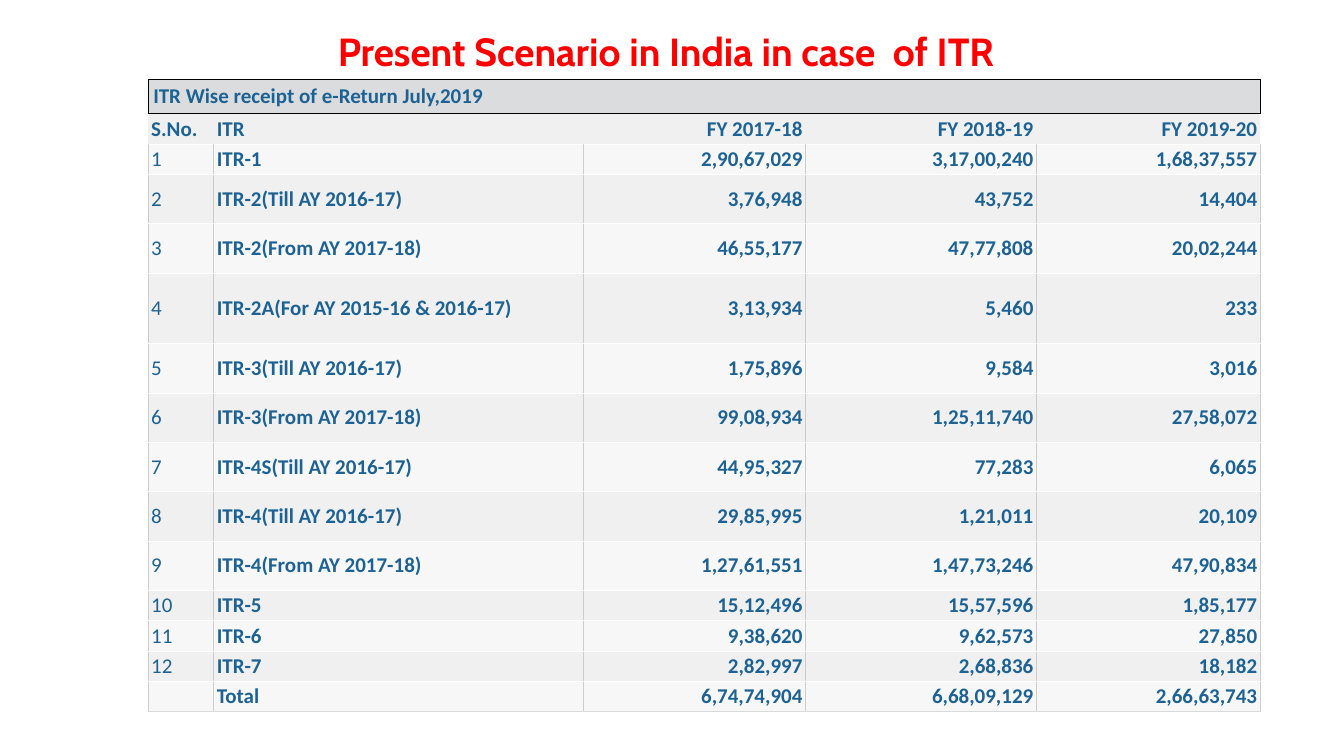
from dataclasses import dataclass

from lxml import etree
from pptx import Presentation
from pptx.dml.color import RGBColor
from pptx.enum import text
from pptx.oxml.ns import qn
from pptx.util import Inches, Pt


@dataclass(frozen=True)
class Theme:
    title_font: str = "Cabin"
    body_font: str = "Calibri"
    title_size: int = 28
    body_size: int = 15
    title_color: str = "FF0000"
    body_color: str = "1D6294"
    banner_fill: str = "DBDCDE"
    band_fills: tuple = ("F7F7F7", "F0F0F0")
    banner_line: str = "000000"
    side_line: str = "CCCCCC"
    row_line: str = "FFFFFF"
    last_line: str = "DADADA"


theme = Theme()
NO_STYLE = "{2D5ABB26-0587-4C30-8999-92F81FD0307C}"


def add_run(paragraph, words, font, size, color, bold):
    run = paragraph.add_run()
    run.text = words
    run.font.name = font
    run.font.size = Pt(size)
    run.font.bold = bold
    run.font.color.rgb = RGBColor.from_string(color)


def style_cell(cell, fill, borders, side_margin):
    """Set fill, margins and borders; borders maps L, R, T, B to (colour, points)."""
    properties = cell._tc.get_or_add_tcPr()
    for side in "LRTB":
        if side in borders:
            color, width = borders[side]
            line = etree.SubElement(properties, qn(f"a:ln{side}"), w=str(Pt(width)))
            solid = etree.SubElement(line, qn("a:solidFill"))
            etree.SubElement(solid, qn("a:srgbClr"), val=color)
    cell.fill.solid()
    cell.fill.fore_color.rgb = RGBColor.from_string(fill)
    cell.margin_left = cell.margin_right = Inches(side_margin)
    cell.margin_top = cell.margin_bottom = Inches(0.02)
    cell.vertical_anchor = text.MSO_ANCHOR.MIDDLE


presentation = Presentation()
presentation.slide_width = Inches(13.33)
presentation.slide_height = Inches(7.5)
slide = presentation.slides.add_slide(presentation.slide_layouts[5])

# Title
title = slide.shapes.title
title.left, title.top = Inches(3.25), Inches(0.22)
title.width, title.height = Inches(7.15), Inches(0.57)
title.text_frame.auto_size = text.MSO_AUTO_SIZE.NONE
title_paragraph = title.text_frame.paragraphs[0]
title_paragraph.alignment = text.PP_ALIGN.LEFT
add_run(title_paragraph, "Present Scenario in India in case  of ITR",
        theme.title_font, theme.title_size, theme.title_color, True)

# Table of returns
rows = [
    ("S.No.", "ITR", "FY 2017-18", "FY 2018-19", "FY 2019-20"),
    ("1", "ITR-1", "2,90,67,029", "3,17,00,240", "1,68,37,557"),
    ("2", "ITR-2(Till AY 2016-17)", "3,76,948", "43,752", "14,404"),
    ("3", "ITR-2(From AY 2017-18)", "46,55,177", "47,77,808", "20,02,244"),
    ("4", "ITR-2A(For AY 2015-16 & 2016-17)", "3,13,934", "5,460", "233"),
    ("5", "ITR-3(Till AY 2016-17)", "1,75,896", "9,584", "3,016"),
    ("6", "ITR-3(From AY 2017-18)", "99,08,934", "1,25,11,740", "27,58,072"),
    ("7", "ITR-4S(Till AY 2016-17)", "44,95,327", "77,283", "6,065"),
    ("8", "ITR-4(Till AY 2016-17)", "29,85,995", "1,21,011", "20,109"),
    ("9", "ITR-4(From AY 2017-18)", "1,27,61,551", "1,47,73,246", "47,90,834"),
    ("10", "ITR-5", "15,12,496", "15,57,596", "1,85,177"),
    ("11", "ITR-6", "9,38,620", "9,62,573", "27,850"),
    ("12", "ITR-7", "2,82,997", "2,68,836", "18,182"),
    ("", "Total", "6,74,74,904", "6,68,09,129", "2,66,63,743"),
]
column_widths = [0.65, 3.67, 2.2, 2.29, 2.22]
row_heights = [0.34] + [0.3] * 2 + [0.49] * 2 + [0.7] + [0.49] * 5 + [0.3] * 4

frame = slide.shapes.add_table(len(row_heights), len(column_widths), Inches(1.47),
                               Inches(0.79), Inches(11.01), Inches(6.3))
table = frame.table
table.first_row = table.horz_banding = False
table._tbl.tblPr.find(qn("a:tableStyleId")).text = NO_STYLE
for column, width in zip(table.columns, column_widths):
    column.width = Inches(width)
for row, height in zip(table.rows, row_heights):
    row.height = Inches(height)

banner = table.cell(0, 0)
banner.merge(table.cell(0, len(column_widths) - 1))
style_cell(banner, theme.banner_fill, dict.fromkeys("LRTB", (theme.banner_line, 1)), 0.05)
add_run(banner.text_frame.paragraphs[0], "ITR Wise receipt of e-Return July,2019",
        theme.body_font, theme.body_size, theme.body_color, True)

for row_number, values in enumerate(rows, start=1):
    is_header = row_number == 1
    is_total = row_number == len(rows)
    borders = {"B": (theme.last_line if is_total else theme.row_line, 0.75)}
    if not is_header:
        borders["T"] = (theme.row_line, 0.75)
        borders["L"] = borders["R"] = (theme.side_line, 0.75)
    for column_number, value in enumerate(values):
        cell = table.cell(row_number, column_number)
        style_cell(cell, theme.band_fills[row_number % 2], borders, 0.03)
        paragraph = cell.text_frame.paragraphs[0]
        if column_number > 1:
            paragraph.alignment = text.PP_ALIGN.RIGHT
        if value:
            add_run(paragraph, value, theme.body_font, theme.body_size,
                    theme.body_color, is_header or column_number > 0)
        else:
            etree.SubElement(paragraph._p, qn("a:endParaRPr"), sz=str(theme.body_size * 100))

# Header and total share the tints of the bands around them
for row_number in range(1, len(rows) + 1):
    tint = theme.band_fills[row_number % 2]
    for column_number in range(len(column_widths)):
        fill = table.cell(row_number, column_number).fill
        fill.fore_color.rgb = RGBColor.from_string(tint)

presentation.save("out.pptx")
